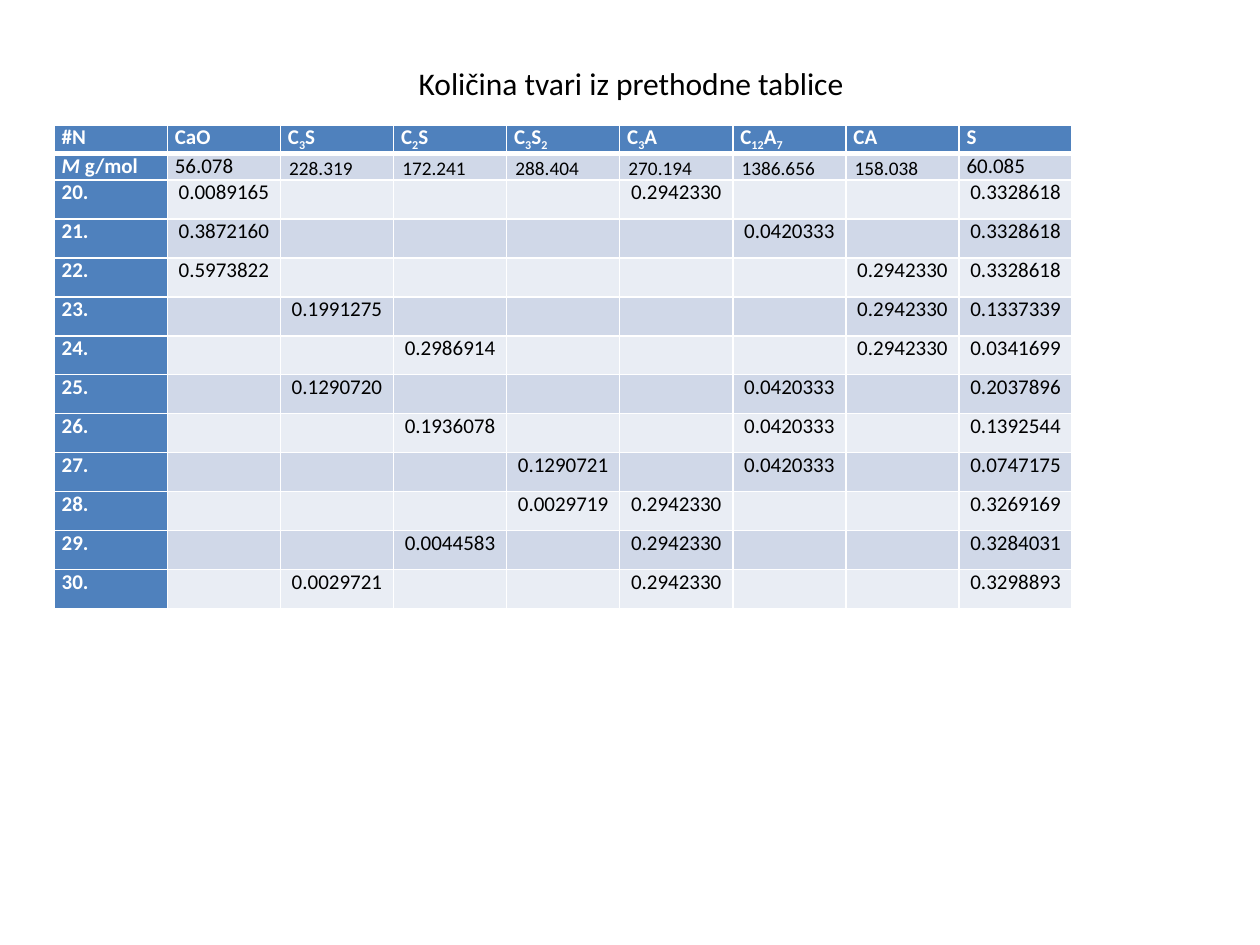
from dataclasses import dataclass
from itertools import groupby

from lxml import etree
from pptx import Presentation
from pptx import util as u
from pptx.dml.color import RGBColor
from pptx.enum import text
from pptx.oxml.ns import qn

Inches, Pt = u.Inches, u.Pt


@dataclass(frozen=True)
class Theme:
    font: str = "Calibri"
    ink: str = "000000"
    white: str = "FFFFFF"
    header: str = "4F81BD"
    bands: tuple = ("D0D8E8", "E9EDF4")
    title_size: int = 18
    table_size: int = 12
    molar_size: int = 11


THEME = Theme()
TITLE = "Količina tvari iz prethodne tablice"
COMPOUNDS = ["CaO", "C3S", "C2S", "C3S2", "C3A", "C12A7", "CA", "S"]
MOLAR_MASSES = ["56.078", "228.319", "172.241", "288.404",
                "270.194", "1386.656", "158.038", "60.085"]
FIRST_NUMBER = 20
AMOUNTS = [
    {"CaO": "0.0089165", "C3A": "0.2942330", "S": "0.3328618"},
    {"CaO": "0.3872160", "C12A7": "0.0420333", "S": "0.3328618"},
    {"CaO": "0.5973822", "CA": "0.2942330", "S": "0.3328618"},
    {"C3S": "0.1991275", "CA": "0.2942330", "S": "0.1337339"},
    {"C2S": "0.2986914", "CA": "0.2942330", "S": "0.0341699"},
    {"C3S": "0.1290720", "C12A7": "0.0420333", "S": "0.2037896"},
    {"C2S": "0.1936078", "C12A7": "0.0420333", "S": "0.1392544"},
    {"C3S2": "0.1290721", "C12A7": "0.0420333", "S": "0.0747175"},
    {"C3S2": "0.0029719", "C3A": "0.2942330", "S": "0.3269169"},
    {"C2S": "0.0044583", "C3A": "0.2942330", "S": "0.3284031"},
    {"C3S": "0.0029721", "C3A": "0.2942330", "S": "0.3298893"},
]


def add_run(paragraph, words, size, color, bold=False):
    run = paragraph.add_run()
    run.text = words
    run.font.name = THEME.font
    run.font.size = Pt(size)
    run.font.bold = bold
    run.font.color.rgb = RGBColor.from_string(color)
    return run


def add_label(cell, words):
    return add_run(cell.text_frame.paragraphs[0], words,
                   THEME.table_size, THEME.white, bold=True)


def add_formula(cell, formula):
    """Write a compound's formula with its digits as subscripts."""
    for is_digit, letters in groupby(formula, str.isdigit):
        run = add_label(cell, "".join(letters))
        if is_digit:
            run.font._element.set("baseline", "-25000")


def style_cell(cell, fill, top=1, bottom=1):
    """Set margins, white borders (widths in points) and fill."""
    cell.margin_left = cell.margin_right = Inches(0.06)
    cell.margin_top = cell.margin_bottom = 0
    properties = cell._tc.get_or_add_tcPr()
    for side, width in (("L", 1), ("R", 1), ("T", top), ("B", bottom)):
        line = etree.SubElement(properties, qn(f"a:ln{side}"), w=str(Pt(width)))
        solid = etree.SubElement(line, qn("a:solidFill"))
        etree.SubElement(solid, qn("a:srgbClr"), val=THEME.white)
    cell.fill.solid()
    cell.fill.fore_color.rgb = RGBColor.from_string(fill)


def add_title(slide, left, top, width, height):
    frame = slide.shapes.add_textbox(left, top, width, height).text_frame
    frame.word_wrap = True
    frame.vertical_anchor = text.MSO_ANCHOR.MIDDLE
    paragraph = frame.paragraphs[0]
    paragraph.alignment = text.PP_ALIGN.CENTER
    add_run(paragraph, TITLE, THEME.title_size, THEME.ink)


def fill_molar_row(table):
    add_label(table.cell(1, 0), "M").font.italic = True
    add_label(table.cell(1, 0), " g/mol")
    last = len(MOLAR_MASSES)
    for column, mass in enumerate(MOLAR_MASSES, 1):
        cell = table.cell(1, column)
        paragraph = cell.text_frame.paragraphs[0]
        size = THEME.table_size
        if 1 < column < last:
            size = THEME.molar_size
            paragraph.line_spacing = 1.15
            cell.margin_left = cell.margin_right = Inches(0.07)
        add_run(paragraph, mass, size, THEME.ink)


def fill_amount_row(table, row, number, amounts):
    add_label(table.cell(row, 0), f"{number}.")
    for compound, amount in amounts.items():
        cell = table.cell(row, COMPOUNDS.index(compound) + 1)
        paragraph = cell.text_frame.paragraphs[0]
        paragraph.alignment = text.PP_ALIGN.CENTER
        add_run(paragraph, amount, THEME.table_size, THEME.ink)


def add_amounts_table(slide, left, top, width, height):
    row_count, column_count = len(AMOUNTS) + 2, len(COMPOUNDS) + 1
    table = slide.shapes.add_table(row_count, column_count,
                                   left, top, width, height).table
    table.first_col = True
    head_height = Inches(0.21)
    amount_height = (height - 2 * head_height) // len(AMOUNTS)
    for index, row in enumerate(table.rows):
        row.height = head_height if index < 2 else amount_height
        for column, cell in enumerate(row.cells):
            is_head = index == 0 or column == 0
            style_cell(cell, THEME.header if is_head else THEME.bands[(index - 1) % 2],
                       top=3 if index == 1 else 1, bottom=3 if index == 0 else 1)

    add_label(table.cell(0, 0), "#N")
    for column, compound in enumerate(COMPOUNDS, 1):
        add_formula(table.cell(0, column), compound)
    fill_molar_row(table)
    for offset, amounts in enumerate(AMOUNTS):
        fill_amount_row(table, offset + 2, FIRST_NUMBER + offset, amounts)


def main():
    deck = Presentation()
    deck.slide_width, deck.slide_height = Inches(10), Inches(7.5)
    slide = deck.slides.add_slide(deck.slide_layouts[6])
    add_title(slide, Inches(0.51), Inches(0.21), Inches(9), Inches(0.9))
    add_amounts_table(slide, Inches(0.43), Inches(0.99), Inches(8.08), Inches(3.82))
    deck.save("out.pptx")


if __name__ == "__main__":
    main()
